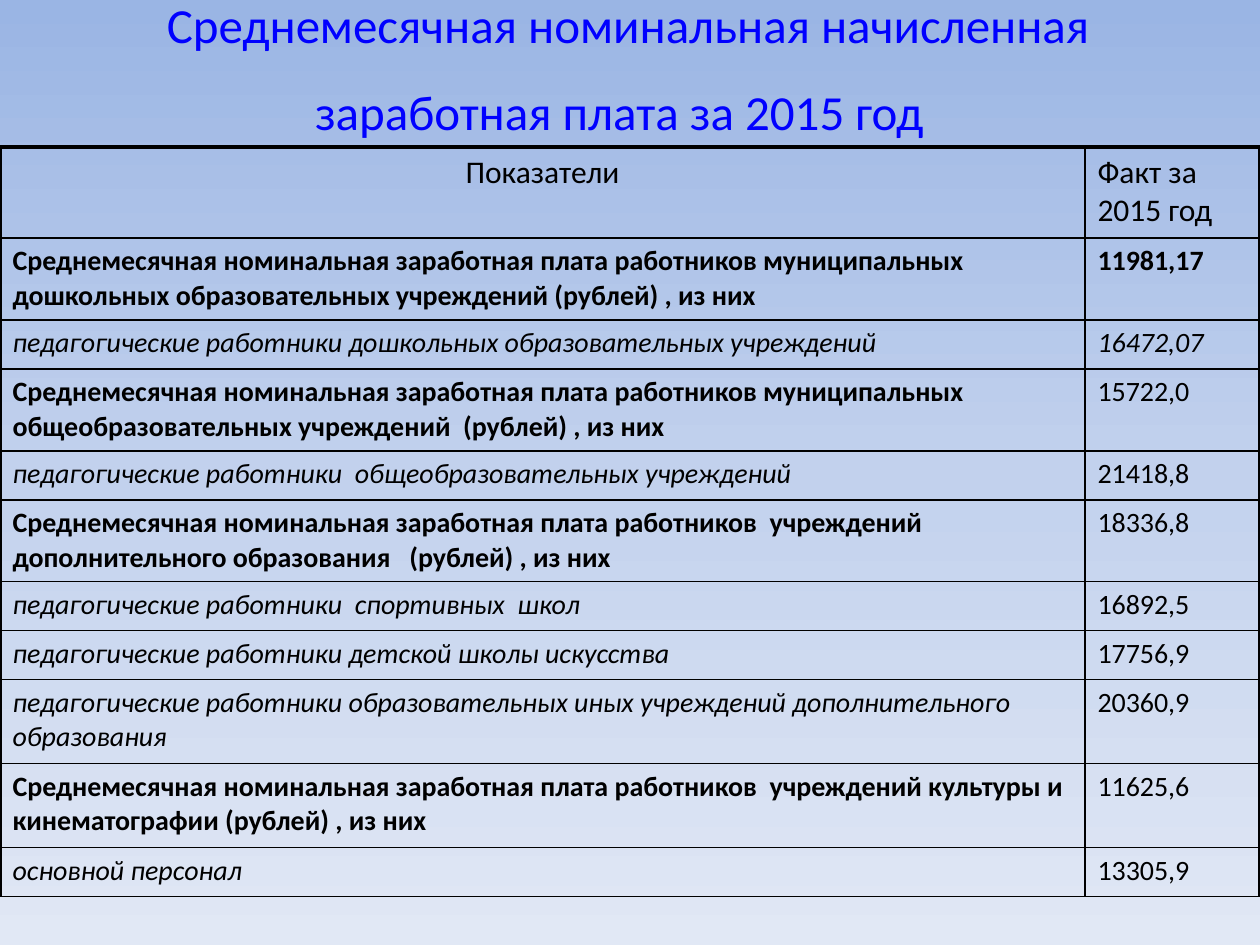
from copy import deepcopy
from dataclasses import dataclass

from lxml.etree import SubElement
from pptx import Presentation
from pptx.dml.color import RGBColor as Color
from pptx.enum.text import MSO_ANCHOR as Anchor, PP_ALIGN as Align
from pptx.oxml.ns import qn
from pptx.util import Emu, Pt

SCALE = 914400 // 126


@dataclass(frozen=True)
class Theme:
    font: str = "Calibri"
    title_color: str = "0000FF"
    ink: str = "000000"
    background: tuple = ((0, "9AB5E4"), (0.5, "C2D1ED"), (1, "E1E8F5"))
    title_size: int = 28
    title_tail_size: int = 44
    header_size: int = 18
    body_size: int = 16
    outer_line: float = 2.25
    inner_line: float = 1


THEME = Theme()
COLUMNS = (1085, 175)
GROUP, DETAIL, LONG, HEADER = 82, 49, 84, 91
BOLD, ITALIC, PLAIN = {"bold": True}, {"italic": True}, {}
TITLE = "Среднемесячная номинальная начисленная заработная плата за 2015 год"
ROWS = (
    (GROUP, "Среднемесячная номинальная заработная плата работников муниципальных "
     "дошкольных образовательных учреждений (рублей) , из них", BOLD, "11981,17", BOLD),
    (DETAIL, "педагогические работники дошкольных образовательных учреждений",
     ITALIC, "16472,07", ITALIC),
    (GROUP, "Среднемесячная номинальная заработная плата работников муниципальных "
     "общеобразовательных учреждений  (рублей) , из них", BOLD, "15722,0", PLAIN),
    (DETAIL, "педагогические работники  общеобразовательных учреждений",
     ITALIC, "21418,8", PLAIN),
    (GROUP, "Среднемесячная номинальная заработная плата работников  учреждений "
     "дополнительного образования   (рублей) , из них", BOLD, "18336,8", PLAIN),
    (DETAIL, "педагогические работники  спортивных  школ", ITALIC, "16892,5", PLAIN),
    (DETAIL, "педагогические работники детской школы искусства", ITALIC, "17756,9", PLAIN),
    (LONG, "педагогические работники образовательных иных учреждений дополнительного "
     "образования", ITALIC, "20360,9", PLAIN),
    (LONG, "Среднемесячная номинальная заработная плата работников  учреждений культуры "
     "и кинематографии (рублей) , из них", BOLD, "11625,6", PLAIN),
    (DETAIL, "основной персонал", ITALIC, "13305,9", PLAIN),
)


def px(length):
    return Emu(length * SCALE)


def add_text(para, text, size=THEME.body_size, color=THEME.ink, bold=False, italic=False,
             align=Align.LEFT):
    para.alignment = align
    span = para.add_run()
    span.text = text
    font = span.font
    font.name, font.size = THEME.font, Pt(size)
    font.bold, font.italic = bold, italic
    font.color.rgb = Color.from_string(color)


def paint_background(page):
    fill = page.background.fill
    fill.gradient()
    fill.gradient_angle = 270
    stops = next(page.background._cSld.iter(qn("a:gsLst")))
    stops.append(deepcopy(stops[0]))
    for stop, (position, color) in zip(fill.gradient_stops, THEME.background):
        stop.color.rgb = Color.from_string(color)
        stop.position = position


def add_title(page):
    box = page.shapes.add_textbox(px(59), px(-29), px(1138), px(199))
    frame = box.text_frame
    frame.word_wrap = True
    frame.vertical_anchor = Anchor.MIDDLE
    para = frame.paragraphs[0]
    add_text(para, TITLE, size=THEME.title_size, color=THEME.title_color, align=Align.CENTER)
    add_text(para, " ", size=THEME.title_tail_size, align=Align.CENTER)


def set_borders(cell, **widths):
    properties = cell._tc.get_or_add_tcPr()
    for side in "LRTB":
        width = widths.get(side, THEME.inner_line)
        line = SubElement(properties, qn(f"a:ln{side}"), w=str(Pt(width)))
        SubElement(SubElement(line, qn("a:solidFill")), qn("a:srgbClr"), val=THEME.ink)


def fill_row(table, index, height, entries):
    table.rows[index].height = px(height)
    top = {"T": THEME.outer_line} if index == 0 else {}
    for column, (text, style) in enumerate(entries):
        cell = table.cell(index, column)
        outer_side = "LR"[column]
        set_borders(cell, **{outer_side: THEME.outer_line}, **top)
        cell.fill.background()
        add_text(cell.text_frame.paragraphs[0], text, **style)


def add_wage_table(page):
    height = HEADER + sum(row[0] for row in ROWS)
    frame = page.shapes.add_table(len(ROWS) + 1, len(COLUMNS), px(0), px(147),
                                  px(sum(COLUMNS)), px(height))
    table = frame.table
    table.first_row = table.horz_banding = False
    for column, width in zip(table.columns, COLUMNS):
        column.width = px(width)
    header = {"size": THEME.header_size}
    fill_row(table, 0, HEADER, (("Показатели", {**header, "align": Align.CENTER}),
                                ("Факт за 2015 год", header)))
    for index, (height, label, label_style, value, value_style) in enumerate(ROWS, 1):
        fill_row(table, index, height, ((label, label_style), (value, value_style)))


def main():
    deck = Presentation()
    deck.slide_width, deck.slide_height = px(1260), px(945)
    page = deck.slides.add_slide(deck.slide_layouts[6])
    paint_background(page)
    add_title(page)
    add_wage_table(page)
    deck.save("out.pptx")


if __name__ == "__main__":
    main()
